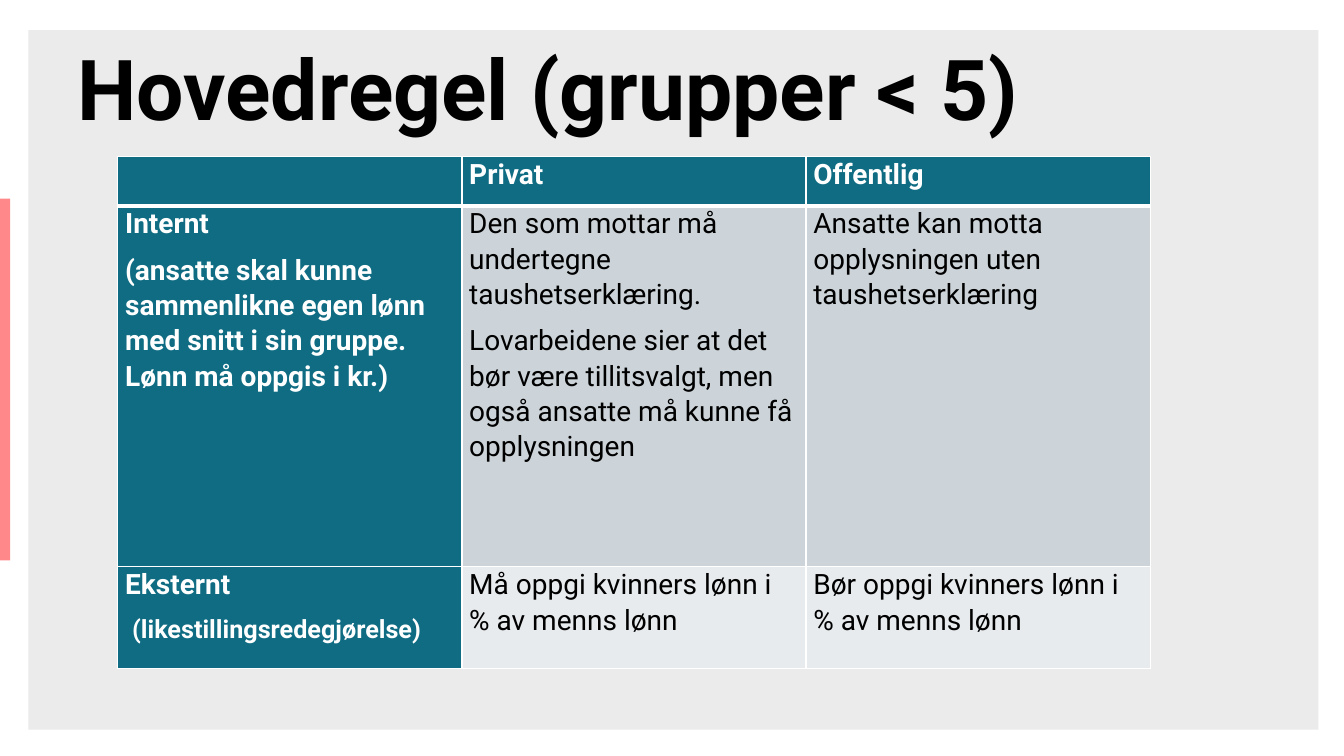
"""Build the slide on the main rule for pay disclosure in small groups."""
from dataclasses import dataclass

from lxml import etree
from pptx import Presentation
from pptx import util as u
from pptx.dml import color
from pptx.enum import shapes, text
from pptx.oxml import ns

FONT = "Roboto"
WHITE, BLACK, TEAL = "FFFFFF", "000000", "0F6C83"
GREY, LIGHT_GREY = "CCD4D9", "E7EBED"


@dataclass
class Panel:
    left: float
    top: float
    width: float
    height: float
    fill: str


@dataclass
class Row:
    height: float
    body_fill: str
    cells: list[list[str]]


PANELS = [
    Panel(20.2, 21.6, 921.6, 499.7, "EBEBEB"),
    Panel(0, 141.8, 7.2, 258.5, "FF888A"),
]
ROWS = [
    Row(35.3, TEAL, [[], ["Privat"], ["Offentlig"]]),
    Row(257.8, GREY, [
        ["Internt", "(ansatte skal kunne sammenlikne egen lønn med snitt i sin gruppe. "
                    "Lønn må oppgis i kr.)"],
        ["Den som mottar må undertegne taushetserklæring.",
         "Lovarbeidene sier at det bør være tillitsvalgt, men også ansatte må kunne få "
         "opplysningen"],
        ["Ansatte kan motta opplysningen uten taushetserklæring"],
    ]),
    Row(72.7, LIGHT_GREY, [
        ["Eksternt", "(likestillingsredegjørelse)"],
        ["Må oppgi kvinners lønn i % av menns lønn"],
        ["Bør oppgi kvinners lønn i % av menns lønn"],
    ]),
]


def rgb(value: str) -> color.RGBColor:
    return color.RGBColor.from_string(value)


def write(paragraph, content: str, *, size: float, hue: str, bold: bool,
          spacing: float = 1.0, after: float = 0, indent: float = 0) -> None:
    if indent:
        paragraph._p.get_or_add_pPr().set("marL", str(u.Pt(indent)))
    paragraph.line_spacing = spacing
    paragraph.space_after = u.Pt(after)
    run = paragraph.add_run()
    run.text = content
    run.font.name, run.font.size, run.font.bold = FONT, u.Pt(size), bold
    run.font.color.rgb = rgb(hue)


def add_panel(slide, panel: Panel) -> None:
    shape = slide.shapes.add_shape(
        shapes.MSO_SHAPE.RECTANGLE, u.Pt(panel.left), u.Pt(panel.top),
        u.Pt(panel.width), u.Pt(panel.height))
    shape.shadow.inherit = False
    shape.fill.solid()
    shape.fill.fore_color.rgb = rgb(panel.fill)
    shape.line.fill.background()


def add_title(slide, content: str) -> None:
    frame = slide.shapes.add_textbox(u.Pt(48.2), u.Pt(21.6), u.Pt(864), u.Pt(90)).text_frame
    frame.word_wrap = True
    frame.vertical_anchor = text.MSO_ANCHOR.MIDDLE
    write(frame.paragraphs[0], content, size=60, hue=BLACK, bold=True, spacing=0.9)


def set_borders(cell, top: float, bottom: float) -> None:
    properties = cell._tc.get_or_add_tcPr()
    for side, width in (("L", 1), ("R", 1), ("T", top), ("B", bottom)):
        line = etree.SubElement(properties, ns.qn(f"a:ln{side}"), w=str(u.Pt(width)))
        fill = etree.SubElement(line, ns.qn("a:solidFill"))
        etree.SubElement(fill, ns.qn("a:srgbClr"), val=WHITE)


def fill_cell(cell, lines: list[str], fill: str, heading: bool) -> None:
    cell.fill.solid()
    cell.fill.fore_color.rgb = rgb(fill)
    cell.margin_left = cell.margin_right = u.Pt(5.2)
    cell.margin_top = cell.margin_bottom = 0
    frame = cell.text_frame
    for index, content in enumerate(lines):
        paragraph = frame.add_paragraph() if index else frame.paragraphs[0]
        small = content.startswith("(likestilling")
        write(paragraph, content, size=18 if small else 20, hue=WHITE if heading else BLACK,
              bold=heading, spacing=1.07, after=8, indent=5 if small else 0)


def add_rules_table(slide, rows: list[Row]) -> None:
    height = sum(row.height for row in rows)
    table = slide.shapes.add_table(
        len(rows), 3, u.Pt(84.2), u.Pt(111.6), u.Pt(737.4), u.Pt(height)).table
    table.horz_banding = False
    for column in table.columns:
        column.width = u.Pt(245.8)
    for r, row in enumerate(rows):
        table.rows[r].height = u.Pt(row.height)
        for c, lines in enumerate(row.cells):
            cell = table.cell(r, c)
            heading = r == 0 or c == 0
            set_borders(cell, top=3 if r == 1 else 1, bottom=3 if r == 0 else 1)
            fill_cell(cell, lines, TEAL if heading else row.body_fill, heading)


def main() -> None:
    presentation = Presentation()
    presentation.slide_width, presentation.slide_height = u.Pt(960), u.Pt(540)
    slide = presentation.slides.add_slide(presentation.slide_layouts[6])
    for panel in PANELS:
        add_panel(slide, panel)
    add_title(slide, "Hovedregel (grupper < 5)")
    add_rules_table(slide, ROWS)
    presentation.save("out.pptx")


if __name__ == "__main__":
    main()
